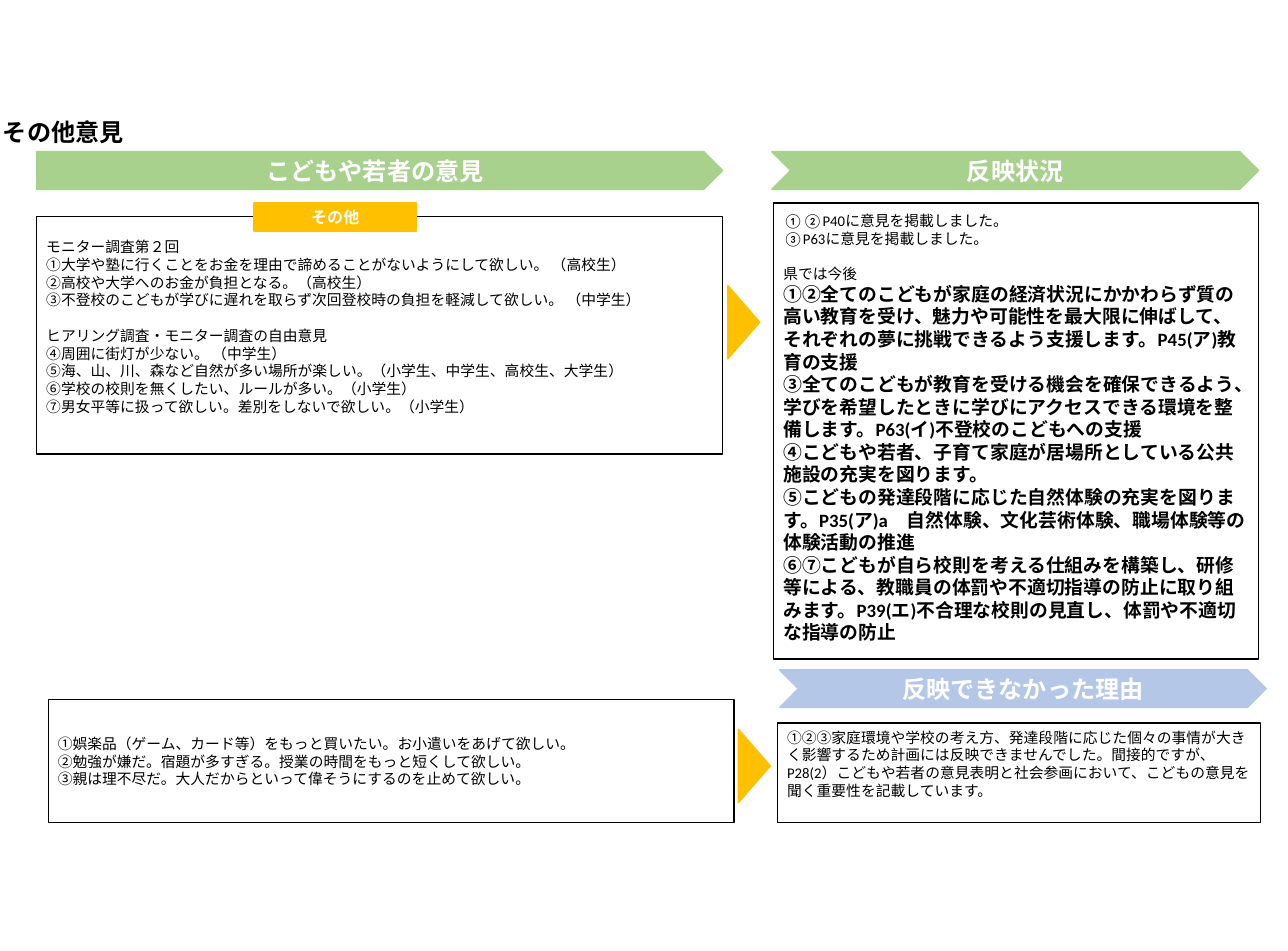
from pptx import Presentation
from pptx.dml.color import RGBColor as RGB
from pptx.enum.shapes import MSO_SHAPE as Shape
from pptx.enum.text import MSO_ANCHOR as Anchor, PP_ALIGN as Align
from pptx.util import Pt

BLACK = RGB(0, 0, 0)
WHITE = RGB(255, 255, 255)
GREEN = RGB(0xA9, 0xD1, 0x8E)
BLUE = RGB(0xB4, 0xC7, 0xE7)
GOLD = RGB(0xFF, 0xC0, 0x00)
FONT = "Calibri"
SMALL, MID, LARGE = 11, 14, 18
GAP = 13.2

MONITOR = [
    "モニター調査第２回",
    "①大学や塾に行くことをお金を理由で諦めることがないようにして欲しい。 （高校生）",
    "②高校や大学へのお金が負担となる。（高校生）",
    "③不登校のこどもが学びに遅れを取らず次回登校時の負担を軽減して欲しい。 （中学生）",
]
HEARING = [
    "ヒアリング調査・モニター調査の自由意見",
    "④周囲に街灯が少ない。 （中学生）",
    "⑤海、山、川、森など自然が多い場所が楽しい。（小学生、中学生、高校生、大学生）",
    "⑥学校の校則を無くしたい、ルールが多い。（小学生）",
    "⑦男女平等に扱って欲しい。差別をしないで欲しい。（小学生）",
]
PAGES = ["①②P40に意見を掲載しました。", "③P63に意見を掲載しました。"]
FUTURE = ["県では今後"]
PLANS = [
    "①②全てのこどもが家庭の経済状況にかかわらず質の高い教育を受け、魅力や可能性を最大限に伸ばして、それぞれの夢に挑戦できるよう支援します。P45(ア)教育の支援",
    "③全てのこどもが教育を受ける機会を確保できるよう、学びを希望したときに学びにアクセスできる環境を整備します。P63(イ)不登校のこどもへの支援",
    "④こどもや若者、子育て家庭が居場所としている公共施設の充実を図ります。",
    "⑤こどもの発達段階に応じた自然体験の充実を図ります。P35(ア)a\u3000自然体験、文化芸術体験、職場体験等の体験活動の推進",
    "⑥⑦こどもが自ら校則を考える仕組みを構築し、研修等による、教職員の体罰や不適切指導の防止に取り組みます。P39(エ)不合理な校則の見直し、体罰や不適切な指導の防止",
]
WISHES = [
    "①娯楽品（ゲーム、カード等）をもっと買いたい。お小遣いをあげて欲しい。",
    "②勉強が嫌だ。宿題が多すぎる。授業の時間をもっと短くして欲しい。",
    "③親は理不尽だ。大人だからといって偉そうにするのを止めて欲しい。",
]
REASON = [
    "①②③家庭環境や学校の考え方、発達段階に応じた個々の事情が大きく影響するため計画には反映できませんでした。間接的ですが、P28(2）こどもや若者の意見表明と社会参画において、こどもの意見を聞く重要性を記載しています。"
]


def style(para, size, color, bold=False):
    """Format every run of a paragraph."""
    for run in para.runs:
        font = run.font
        font.name, font.size, font.bold = FONT, Pt(size), bold
        font.color.rgb = color


def draw(slide, kind, box, fill, line):
    """Add a flat preset shape in the box."""
    item = slide.shapes.add_shape(kind, *map(Pt, box))
    item.shadow.inherit = False
    if fill is None:
        item.fill.background()
    else:
        item.fill.solid()
        item.fill.fore_color.rgb = fill
    item.line.color.rgb = line
    item.line.width = Pt(1)
    return item


def title(slide, box, text):
    """Write the slide title."""
    frame = slide.shapes.add_textbox(*map(Pt, box)).text_frame
    frame.word_wrap = True
    frame.margin_left = Pt(2.2)
    frame.text = text
    style(frame.paragraphs[0], LARGE, BLACK, True)


def label(slide, kind, box, text, fill, size=LARGE):
    """Draw a filled band with a centred white heading."""
    frame = draw(slide, kind, box, fill, fill).text_frame
    frame.word_wrap = True
    frame.vertical_anchor = Anchor.MIDDLE
    frame.text = text
    frame.paragraphs[0].alignment = Align.CENTER
    style(frame.paragraphs[0], size, WHITE, True)


def panel(slide, box, inset, groups):
    """Draw a framed panel of (lines, size, bold, gap before) groups."""
    frame = draw(slide, Shape.RECTANGLE, box, None, BLACK).text_frame
    frame.word_wrap = True
    frame.vertical_anchor = Anchor.TOP
    frame.margin_top = Pt(inset)
    frame.margin_bottom = 0
    frame.text = "\n".join(text for group in groups for text in group[0])
    paras = iter(frame.paragraphs)
    for lines, size, bold, gap in groups:
        for row in range(len(lines)):
            para = next(paras)
            para.alignment = Align.LEFT
            para.space_before = Pt(0 if row else gap)
            style(para, size, BLACK, bold)


def arrow(slide, box):
    """Fill the upright box with a triangle pointing right."""
    left, top, wide, high = box
    shift = (high - wide) / 2
    turned = (left - shift, top + shift, high, wide)
    draw(slide, Shape.ISOSCELES_TRIANGLE, turned, GOLD, GOLD).rotation = 90


def adopted(slide, box):
    """Show the opinions that the plan reflects."""
    left, top, wide, high = box
    right = left + 549.3
    label(slide, Shape.PENTAGON, (left, top, 511.2, 28.1), "こどもや若者の意見", GREEN)
    label(slide, Shape.CHEVRON, (left + 547.9, top, 362.9, 28.1), "反映状況", GREEN)
    panel(slide, (left, top + 48.3, 511.2, 177.1), 16,
          [(MONITOR, SMALL, False, 0), (HEARING, SMALL, False, GAP)])
    label(slide, Shape.RECTANGLE, (left + 162, top + 38.2, 121, 20.9), "その他", GOLD, 12)
    arrow(slide, (left + 515.1, top + 99.7, 23.8, 54.7))
    panel(slide, (right, top + 38.2, left + wide - right, high - 38.2), 6.5,
          [(PAGES, SMALL, False, 0), (FUTURE, SMALL, False, GAP), (PLANS, MID, True, 0)])


def declined(slide, box):
    """Show the opinions left out and the reason."""
    left, top, wide, high = box
    right = left + 543.6
    label(slide, Shape.CHEVRON, (left + 545, top, 362.9, 28.1), "反映できなかった理由", BLUE)
    panel(slide, (left, top + 22.3, 511.2, high - 22.3), 26, [(WISHES, SMALL, False, 0)])
    arrow(slide, (left + 514.4, top + 44.3, 23.8, 54.7))
    panel(slide, (right, top + 39.6, 360, high - 39.6), 4, [(REASON, SMALL, False, 0)])


def main():
    """Build and save the slide."""
    deck = Presentation()
    deck.slide_width, deck.slide_height = Pt(960), Pt(708.5)
    slide = deck.slides.add_slide(deck.slide_layouts[6])
    title(slide, (0, 84.2, 765, 28.8), "その他意見")
    adopted(slide, (27.4, 113, 910.7, 378))
    declined(slide, (36, 499, 907.9, 113.7))
    deck.save("out.pptx")


if __name__ == "__main__":
    main()
